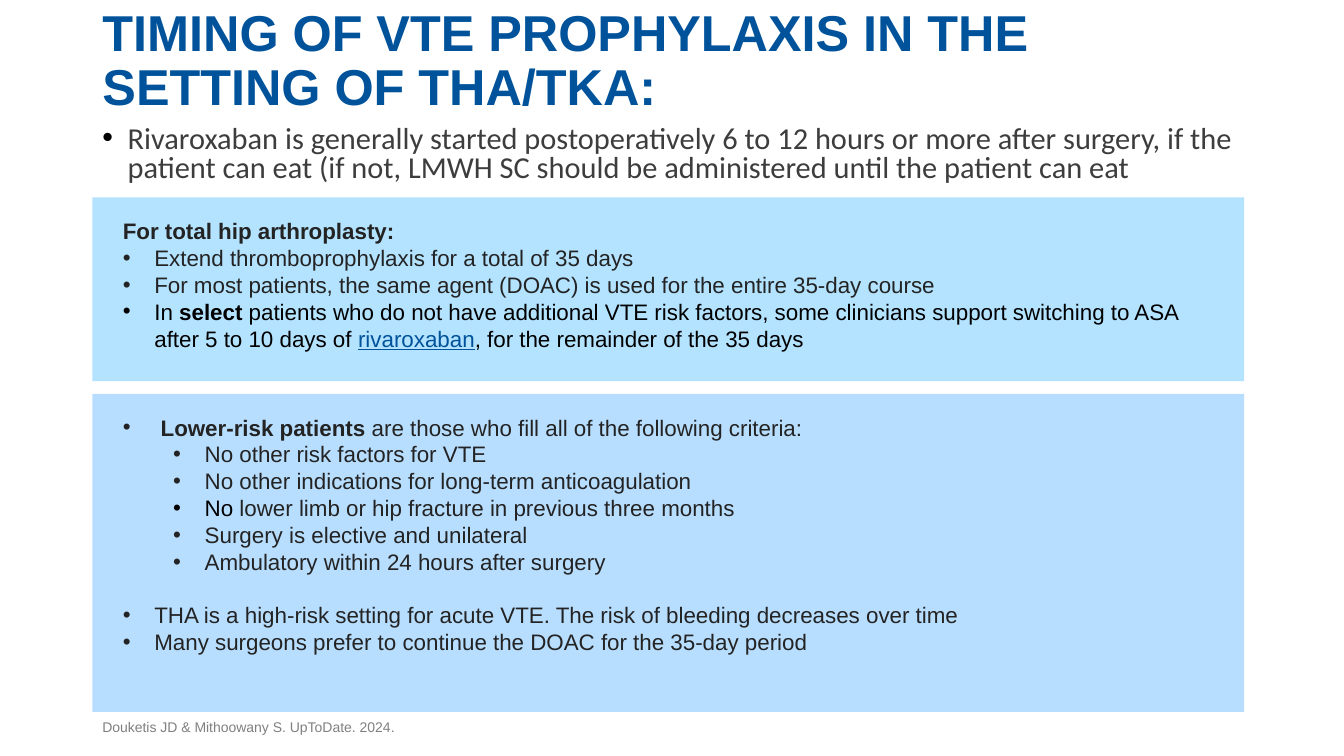
from lxml import etree
from pptx import Presentation
from pptx import util as u
from pptx.dml.color import RGBColor
from pptx.enum import shapes, text
from pptx.oxml.ns import qn

PX = 9525
BLUE = RGBColor(0x00, 0x53, 0x9B)
HIP_FILL = RGBColor(0xB4, 0xE3, 0xFF)
RISK_FILL = RGBColor(0xB8, 0xDE, 0xFF)
INK = RGBColor(0x23, 0x23, 0x23)
CHARCOAL = RGBColor(0x3D, 0x3D, 0x3D)
GREY = RGBColor(0x80, 0x80, 0x80)
BLACK = RGBColor(0, 0, 0)
LEFT, TEXT_WIDTH, PANEL_WIDTH = 88, 1104, 1097


def px(length):
    return u.Emu(length * PX)


def write(para, words, size=16, font="Arial", color=INK, bold=False, underline=False):
    span = para.add_run()
    span.text = words
    span.font.size = u.Pt(size)
    span.font.name = font
    span.font.color.rgb = color
    span.font.bold = bold
    span.font.underline = underline


class Slide:
    def __init__(self, deck):
        self.page = deck.slides.add_slide(deck.slide_layouts[1])

    def place(self, box, top, width, height):
        box.left, box.top, box.width, box.height = map(px, (LEFT, top, width, height))

    def frame(self, box, anchor, inset=None):
        frame = box.text_frame
        frame.word_wrap = True
        frame.auto_size = text.MSO_AUTO_SIZE.NONE
        frame.vertical_anchor = anchor
        if inset:
            frame.margin_left = frame.margin_right = px(inset[0])
            frame.margin_top = frame.margin_bottom = px(inset[1])
        return frame

    def format(self, para, spans, indent=0, hang=0, level=0, before=0,
               spacing=1.0, bullet_color=None):
        props = para._p.get_or_add_pPr()
        props.set("marL", str(px(indent)))
        props.set("indent", str(px(-hang)))
        if hang:
            if bullet_color is not None:
                tint = etree.SubElement(props, qn("a:buClr"))
                etree.SubElement(tint, qn("a:srgbClr")).set("val", str(bullet_color))
            etree.SubElement(props, qn("a:buFont")).set("typeface", "Arial")
            etree.SubElement(props, qn("a:buChar")).set("char", "•")
        para.level = level
        para.alignment = text.PP_ALIGN.LEFT
        para.space_before = u.Pt(before)
        para.line_spacing = spacing
        for words, style in spans:
            write(para, words, **style)

    def title(self, words, top, height):
        box = self.page.shapes.title
        self.place(box, top, TEXT_WIDTH, height)
        frame = self.frame(box, text.MSO_ANCHOR.BOTTOM)
        self.format(frame.paragraphs[0], [(words, dict(size=36, color=BLUE, bold=True))],
                    spacing=0.9)

    def body(self, words, top, height):
        box = self.page.placeholders[1]
        self.place(box, top, TEXT_WIDTH, height)
        frame = self.frame(box, text.MSO_ANCHOR.TOP)
        style = dict(size=21.7, font="Calibri", color=CHARCOAL)
        self.format(frame.paragraphs[0], [(words, style)], indent=24, hang=24,
                    spacing=0.8, bullet_color=BLACK)

    def panel(self, top, height, fill, paragraphs):
        box = self.page.shapes.add_shape(
            shapes.MSO_SHAPE.RECTANGLE, px(LEFT), px(top), px(PANEL_WIDTH), px(height))
        box.shadow.inherit = False
        box.fill.solid()
        box.fill.fore_color.rgb = fill
        box.line.fill.background()
        frame = self.frame(box, text.MSO_ANCHOR.TOP, inset=(29, 19))
        for index, (spans, layout) in enumerate(paragraphs):
            para = frame.add_paragraph() if index else frame.paragraphs[0]
            self.format(para, spans, **layout)

    def source(self, words, top, height):
        box = self.page.shapes.add_textbox(px(LEFT), px(top), px(TEXT_WIDTH), px(height))
        frame = self.frame(box, text.MSO_ANCHOR.BOTTOM)
        self.format(frame.paragraphs[0], [(words, dict(size=10, color=GREY))])


def main():
    deck = Presentation()
    deck.slide_width, deck.slide_height = px(1280), px(720)
    slide = Slide(deck)
    plain, strong, black = {}, dict(bold=True), dict(color=BLACK)
    bullet = dict(indent=30, hang=30)
    wide_bullet = dict(indent=36, hang=36)
    sub_bullet = dict(indent=78, hang=30, level=1)

    slide.title("TIMING OF VTE PROPHYLAXIS IN THE SETTING OF THA/TKA:", 0, 116)
    slide.body("Rivaroxaban is generally started postoperatively 6 to 12 hours or more "
               "after surgery, if the patient can eat (if not, LMWH SC should be "
               "administered until the patient can eat", 115, 74)
    slide.panel(188, 175, HIP_FILL, [
        ([("For total hip arthroplasty:", strong)], {}),
        ([("Extend thromboprophylaxis for a total of 35 days", plain)], bullet),
        ([("For most patients, the same agent (DOAC) is used for the entire "
           "35-day course", plain)], bullet),
        ([("In ", black),
          ("select", dict(color=BLACK, bold=True)),
          (" patients who do not have additional VTE risk factors, some clinicians "
           "support switching to ASA after 5 to 10 days of ", black),
          ("rivaroxaban", dict(color=BLUE, underline=True)),
          (", for the remainder of the 35 days", black)], bullet),
    ])
    criteria = [
        [("No other risk factors for VTE", plain)],
        [("No other indications for long-term anticoagulation", plain)],
        [("No", black), (" lower limb or hip fracture in previous three months", plain)],
        [("Surgery is elective and unilateral", plain)],
        [("Ambulatory within 24 hours after surgery", plain)],
    ]
    slide.panel(375, 303, RISK_FILL, [
        ([("Lower-risk patients ", strong),
          ("are those who fill all of the following criteria:", plain)], wide_bullet),
        *[(spans, sub_bullet) for spans in criteria],
        ([("THA is a high-risk setting for acute VTE. The risk of bleeding decreases "
           "over time", plain)], dict(bullet, before=19)),
        ([("Many surgeons prefer to continue the DOAC for the 35-day period", plain)],
         bullet),
    ])
    slide.source("Douketis JD & Mithoowany S. UpToDate. 2024.", 667, 38)
    deck.save("out.pptx")


if __name__ == "__main__":
    main()
